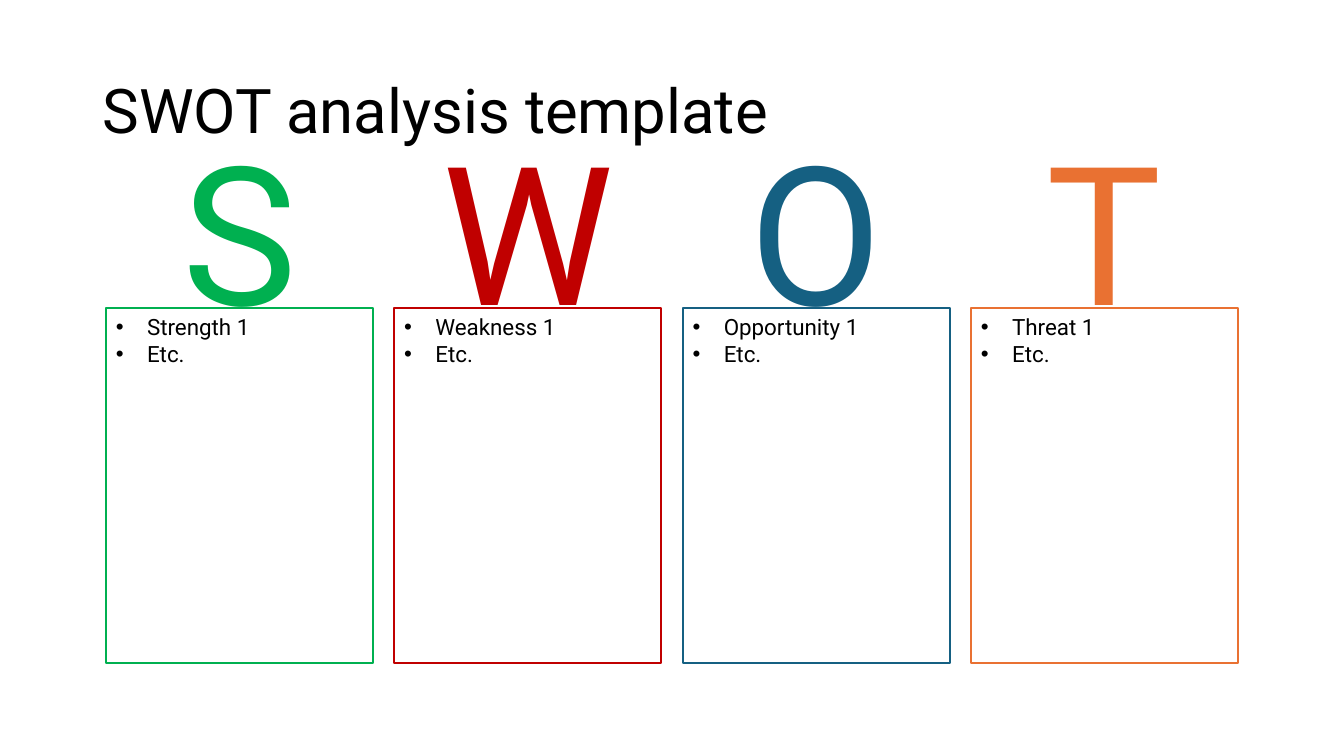
from lxml.etree import SubElement
from pptx import Presentation
from pptx.dml.color import RGBColor
from pptx.enum.shapes import MSO_SHAPE as SHAPE
from pptx.enum.text import MSO_ANCHOR as ANCHOR, PP_ALIGN as ALIGN
from pptx.oxml.ns import qn
from pptx.util import Inches, Pt

TITLE = "SWOT analysis template"
COLUMNS = [
    ("S", "green", ["Strength 1", "Etc."]),
    ("W", "red", ["Weakness 1", "Etc."]),
    ("O", "blue", ["Opportunity 1", "Etc."]),
    ("T", "orange", ["Threat 1", "Etc."]),
]
COLORS = {"black": "000000", "green": "00B050", "red": "C00000",
          "blue": "156082", "orange": "E97132"}
FONT = "Roboto"
LEFT, PITCH = 0.92, 2.86
LETTER_TOP, LETTER_W, LETTER_H = 1.62, 2.91, 1.28
BOX_INSET, BOX_TOP, BOX_W, BOX_H = 0.13, 3.06, 2.65, 3.52
INDENT = 0.31


def color(name):
    return RGBColor.from_string(COLORS[name])


def write(tf, lines, size, name, **paragraph_format):
    tf.word_wrap = True
    for i, line in enumerate(lines):
        p = tf.add_paragraph() if i else tf.paragraphs[0]
        for key, value in paragraph_format.items():
            setattr(p, key, value)
        r = p.add_run()
        r.text = line
        r.font.color.rgb = color(name)
        for key, value in {"name": FONT, "size": Pt(size)}.items():
            setattr(r.font, key, value)


def add_text(s, area, text, size, name, **paragraph_format):
    tf = s.shapes.add_textbox(*map(Inches, area)).text_frame
    tf.vertical_anchor = ANCHOR.MIDDLE
    write(tf, [text], size, name, **paragraph_format)


def add_box(s, x, name, lines):
    sp = s.shapes.add_shape(SHAPE.RECTANGLE, *map(Inches, (x, BOX_TOP, BOX_W, BOX_H)))
    sp.shadow.inherit = False
    sp.fill.background()
    sp.line.color.rgb = color(name)
    sp.line.width = Pt(1.5)
    tf = sp.text_frame
    tf.vertical_anchor = ANCHOR.TOP
    write(tf, lines, 16, "black", alignment=ALIGN.LEFT)
    for p in tf.paragraphs:
        pr = p._p.get_or_add_pPr()
        pr.set("marL", str(Inches(INDENT)))
        pr.set("indent", str(-Inches(INDENT)))
        SubElement(pr, qn("a:buFont"), typeface="Arial")
        SubElement(pr, qn("a:buChar"), char="•")


def main():
    prs = Presentation()
    prs.slide_width, prs.slide_height = Inches(13.33), Inches(7.5)
    s = prs.slides.add_slide(prs.slide_layouts[6])
    add_text(s, (LEFT, 0.4, 11.5, 1.45), TITLE, 44, "black", line_spacing=0.9)
    for i, (letter, name, lines) in enumerate(COLUMNS):
        x = LEFT + i * PITCH
        add_box(s, x + BOX_INSET, name, lines)
        add_text(s, (x, LETTER_TOP, LETTER_W, LETTER_H), letter, 138, name,
                 alignment=ALIGN.CENTER)
    prs.save("out.pptx")


if __name__ == "__main__":
    main()
